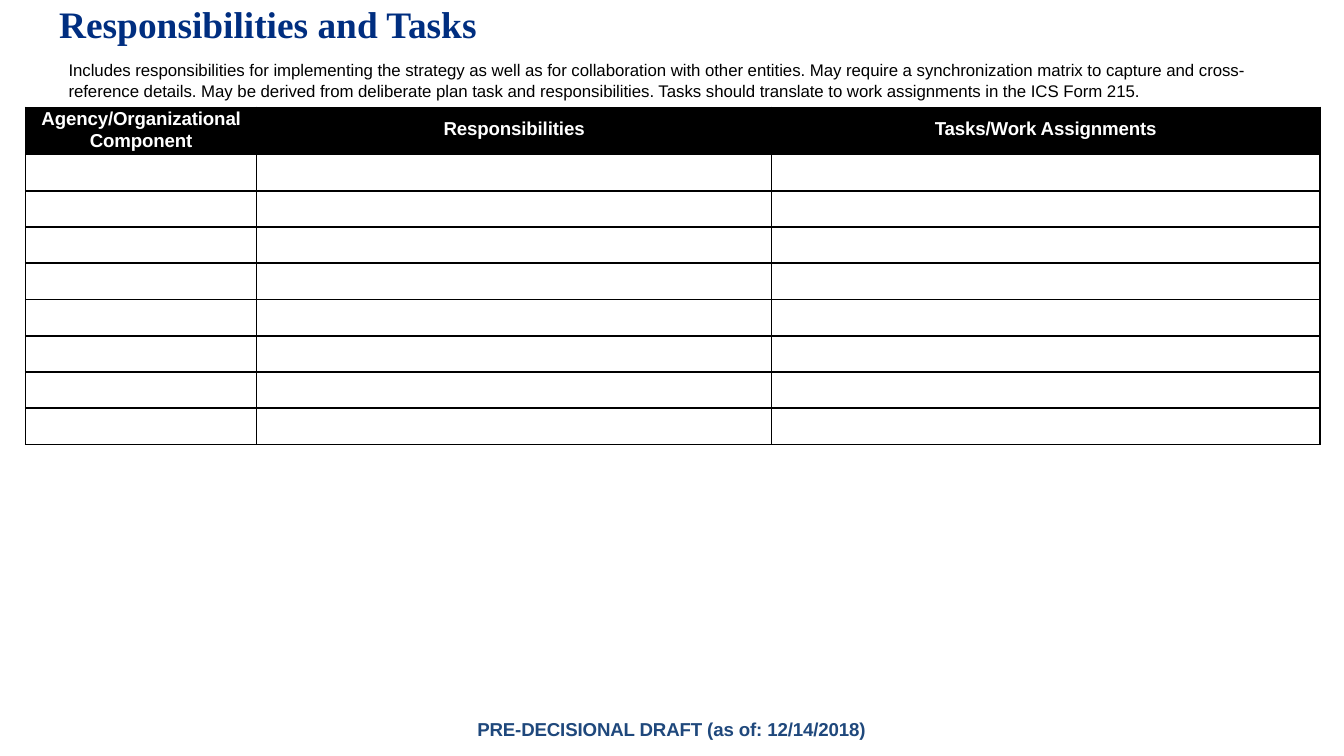
import pptx
import pptx.util
import pptx.dml.color
import pptx.enum.text
import pptx.oxml.ns
import lxml.etree

Inches = pptx.util.Inches
Pt = pptx.util.Pt
RGBColor = pptx.dml.color.RGBColor
ALIGN = pptx.enum.text.PP_ALIGN
ANCHOR = pptx.enum.text.MSO_ANCHOR

BLACK = RGBColor(0x00, 0x00, 0x00)
WHITE = RGBColor(0xFF, 0xFF, 0xFF)
NAVY = RGBColor(0x00, 0x2E, 0x80)
FOOTER_BLUE = RGBColor(0x1F, 0x48, 0x7C)

TITLE_FONT = {"name": "Times New Roman", "size": Pt(20), "bold": True}
BODY_FONT = {"name": "Arial", "size": Pt(9), "bold": False}
STRONG_FONT = {"name": "Arial", "size": Pt(10), "bold": True}

COLUMN_WIDTHS = [1.72, 3.83, 4.08]
HEADER_HEIGHT = 0.35
ROW_HEIGHT = 0.27
BLANK_ROWS = 8
HEADERS = [
    (["Agency/Organizational", "Component"], 0),
    (["Responsibilities"], 0.08),
    (["Tasks/Work Assignments"], 0.08),
]
DESCRIPTION = (
    "Includes responsibilities for implementing the strategy as well as for "
    "collaboration with other entities. May require a synchronization matrix to "
    "capture and cross-reference details. May be derived from deliberate plan task "
    "and responsibilities. Tasks should translate to work assignments in the ICS "
    "Form 215."
)


def set_all(target, values):
    for name, value in values.items():
        setattr(target, name, value)


def set_margins(target, top=0):
    set_all(target, {"margin_left": 0, "margin_right": 0, "margin_bottom": 0,
                     "margin_top": Inches(top)})


def write_lines(frame, lines, font, color, align=ALIGN.LEFT, tracking=0):
    """Write one paragraph a line; tracking is in hundredths of a point."""
    for index, line in enumerate(lines):
        paragraph = frame.paragraphs[0] if index == 0 else frame.add_paragraph()
        paragraph.alignment = align
        run = paragraph.add_run()
        run.text = line
        set_all(run.font, font)
        run.font.color.rgb = color
        run._r.get_or_add_rPr().set("spc", str(tracking))


def format_box(shape, box, top=0):
    names = ("left", "top", "width", "height")
    set_all(shape, dict(zip(names, map(Inches, box))))
    frame = shape.text_frame
    set_margins(frame, top)
    set_all(frame, {"word_wrap": True, "vertical_anchor": ANCHOR.TOP,
                    "auto_size": pptx.enum.text.MSO_AUTO_SIZE.NONE})
    return frame


def add_title(slide, box):
    frame = format_box(slide.shapes.title, box, top=0.01)
    write_lines(frame, ["Responsibilities and Tasks"], TITLE_FONT, NAVY)


def add_text(slide, box, text, font, color, align=ALIGN.LEFT, top=0, spacing=1.0,
             tracking=0):
    shape = slide.shapes.add_textbox(*map(Inches, box))
    frame = format_box(shape, box, top)
    write_lines(frame, [text], font, color, align, tracking)
    frame.paragraphs[0].line_spacing = spacing


def add_borders(cell):
    """Draw a thin black line on every side, ahead of the cell's fill."""
    properties = cell._tc.get_or_add_tcPr()
    qn = pptx.oxml.ns.qn
    for index, side in enumerate(("lnL", "lnR", "lnT", "lnB")):
        line = lxml.etree.Element(qn("a:" + side), w=str(Pt(1)))
        fill = lxml.etree.SubElement(line, qn("a:solidFill"))
        lxml.etree.SubElement(fill, qn("a:srgbClr"), val=str(BLACK))
        properties.insert(index, line)


def set_blank_size(cell, size):
    """Keep an empty cell's line shorter than its row."""
    paragraph = cell.text_frame.paragraphs[0]._p
    lxml.etree.SubElement(paragraph, pptx.oxml.ns.qn("a:endParaRPr"),
                          sz=str(size * 100))


def add_task_table(slide, left, top):
    heights = [HEADER_HEIGHT] + [ROW_HEIGHT] * BLANK_ROWS
    frame = slide.shapes.add_table(
        len(heights), len(COLUMN_WIDTHS), Inches(left), Inches(top),
        Inches(sum(COLUMN_WIDTHS)), Inches(sum(heights)))
    table = frame.table
    set_all(table, {"first_row": False, "horz_banding": False})
    for column, width in zip(table.columns, COLUMN_WIDTHS):
        column.width = Inches(width)
    for row, height in zip(table.rows, heights):
        row.height = Inches(height)

    # Header row
    for column, (lines, margin) in enumerate(HEADERS):
        cell = table.cell(0, column)
        set_margins(cell, margin)
        cell.fill.solid()
        cell.fill.fore_color.rgb = BLACK
        write_lines(cell.text_frame, lines, STRONG_FONT, WHITE, ALIGN.CENTER, -5)
    first_line, second_line = table.cell(0, 0).text_frame.paragraphs
    first_line.line_spacing = Pt(11.6)
    second_line.space_before = Pt(0.8)

    # Blank rows to fill in
    for row in range(1, len(heights)):
        for column in range(len(COLUMN_WIDTHS)):
            cell = table.cell(row, column)
            set_margins(cell)
            cell.fill.background()
            set_blank_size(cell, 9)
    for cell in table.iter_cells():
        add_borders(cell)


def main():
    presentation = pptx.Presentation()
    presentation.slide_width = Inches(10)
    presentation.slide_height = presentation.slide_width * 9 // 16
    slide = presentation.slides.add_slide(presentation.slide_layouts[5])

    add_title(slide, (0.44, 0, 3.6, 0.36))
    add_text(slide, (0.51, 0.42, 8.85, 0.35), DESCRIPTION, BODY_FONT, BLACK,
             top=0.01, spacing=1.08, tracking=-3)
    add_task_table(slide, 0.19, 0.8)
    add_text(slide, (3.52, 5.34, 2.95, 0.18),
             "PRE-DECISIONAL DRAFT (as of: 12/14/2018)", STRONG_FONT, FOOTER_BLUE,
             align=ALIGN.CENTER, tracking=-5)
    presentation.save("out.pptx")


if __name__ == "__main__":
    main()
